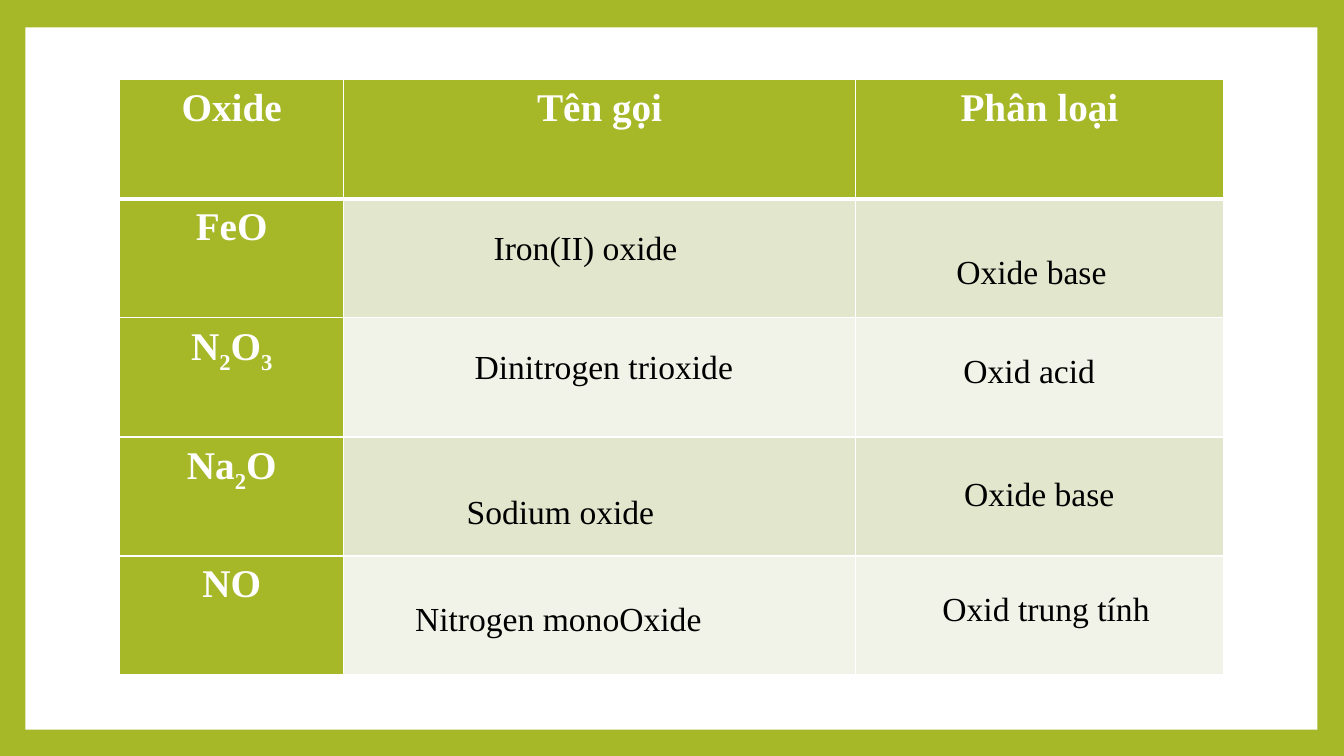
from lxml import etree
from pptx import Presentation
from pptx.dml.color import RGBColor
from pptx.enum.shapes import MSO_SHAPE
from pptx.enum.text import MSO_AUTO_SIZE, PP_ALIGN
from pptx.oxml.ns import qn
from pptx.util import Cm, Pt

RECTANGLE = MSO_SHAPE.RECTANGLE
CENTER = PP_ALIGN.CENTER
GROW = MSO_AUTO_SIZE.SHAPE_TO_FIT_TEXT

COLORS = {
    "green": "A6B727",
    "white": "FFFFFF",
    "black": "000000",
    "band_dark": "E1E6CD",
    "band_light": "F1F3E8",
}
FONT = "Times New Roman"


def rgb(name):
    return RGBColor.from_string(COLORS[name])


class SlideBuilder:
    def __init__(self, slide):
        self.s = slide

    def background(self, color):
        fill = self.s.background.fill
        fill.solid()
        fill.fore_color.rgb = rgb(color)

    def panel(self, x, y, w, h, color):
        sp = self.s.shapes.add_shape(RECTANGLE, Cm(x), Cm(y), Cm(w), Cm(h))
        sp.shadow.inherit = False
        sp.fill.solid()
        sp.fill.fore_color.rgb = rgb(color)
        sp.line.fill.background()

    def font(self, p, size, color, bold=False):
        p.font.name = FONT
        p.font.size = Pt(size)
        p.font.bold = bold
        p.font.color.rgb = rgb(color)

    def label(self, x, y, w, text):
        sp = self.s.shapes.add_textbox(Cm(x), Cm(y), Cm(w), Cm(1.27))
        tf = sp.text_frame
        tf.word_wrap = True
        tf.auto_size = GROW
        p = tf.paragraphs[0]
        p.add_run().text = text
        self.font(p, 24, "black")

    def table(self, x, y, col_widths, row_height, n_rows):
        frame = self.s.shapes.add_table(
            n_rows, len(col_widths), Cm(x), Cm(y),
            Cm(sum(col_widths)), Cm(row_height * n_rows))
        table = frame.table
        table.first_col = True
        for col, width in zip(table.columns, col_widths):
            col.width = Cm(width)
        for row in table.rows:
            row.height = Cm(row_height)
        return table

    def cell(self, cell, color, top=1, bottom=1):
        tc_pr = cell._tc.get_or_add_tcPr()
        for side, width in (("L", 1), ("R", 1), ("T", top), ("B", bottom)):
            ln = etree.SubElement(tc_pr, qn(f"a:ln{side}"), w=str(Pt(width)))
            fill = etree.SubElement(ln, qn("a:solidFill"))
            etree.SubElement(fill, qn("a:srgbClr"), val=COLORS["white"])
        cell.fill.solid()
        cell.fill.fore_color.rgb = rgb(color)

    def heading(self, cell, text):
        """Write a bold heading; digits become subscripts."""
        cell.margin_left = cell.margin_right = Cm(0.18)
        cell.margin_top = cell.margin_bottom = 0
        p = cell.text_frame.paragraphs[0]
        p.alignment = CENTER
        p.line_spacing = 1.15
        self.font(p, 28, "white", bold=True)
        parts = [text]
        for digit in "23":
            parts = [piece for part in parts for piece in part.partition(digit)]
        for part in filter(None, parts):
            r = p.add_run()
            r.text = part
            if part.isdigit():
                r._r.get_or_add_rPr().set("baseline", "-25000")


HEADERS = ["Oxide", "Tên gọi", "Phân loại"]
FORMULAS = ["FeO", "N2O3", "Na2O", "NO"]
NAMES = [
    (12.19, 5.59, "Iron(II) oxide"),
    (11.71, 8.59, "Dinitrogen trioxide"),
    (11.51, 12.24, "Sodium oxide"),
    (10.21, 14.94, "Nitrogen monoOxide"),
]
CLASSES = [
    (23.85, 6.2, 4.57, "Oxide base"),
    (24.05, 11.79, 4.57, "Oxide base"),
    (24.03, 8.69, 4.6, "Oxid acid"),
    (23.5, 14.68, 8.64, "Oxid trung tính"),
]


def main():
    prs = Presentation()
    prs.slide_width, prs.slide_height = Cm(33.87), Cm(19.05)
    slide = SlideBuilder(prs.slides.add_slide(prs.slide_layouts[6]))

    # Green frame around a white panel
    slide.background("green")
    slide.panel(0.64, 0.69, 32.56, 17.7, "white")

    # Oxide table: green header row and first column, banded body
    table = slide.table(3.02, 2.01, [5.64, 12.9, 9.27], 3.0, 5)
    for i in range(5):
        band = "band_dark" if i % 2 else "band_light"
        for j in range(3):
            color = "green" if i == 0 or j == 0 else band
            slide.cell(table.cell(i, j), color,
                       top=3 if i == 1 else 1, bottom=3 if i == 0 else 1)
    for j, text in enumerate(HEADERS):
        slide.heading(table.cell(0, j), text)
    for i, text in enumerate(FORMULAS, start=1):
        slide.heading(table.cell(i, 0), text)

    # Answers laid over the table body
    for x, y, text in NAMES:
        slide.label(x, y, 16.92, text)
    for x, y, w, text in CLASSES:
        slide.label(x, y, w, text)

    prs.save("out.pptx")


if __name__ == "__main__":
    main()
